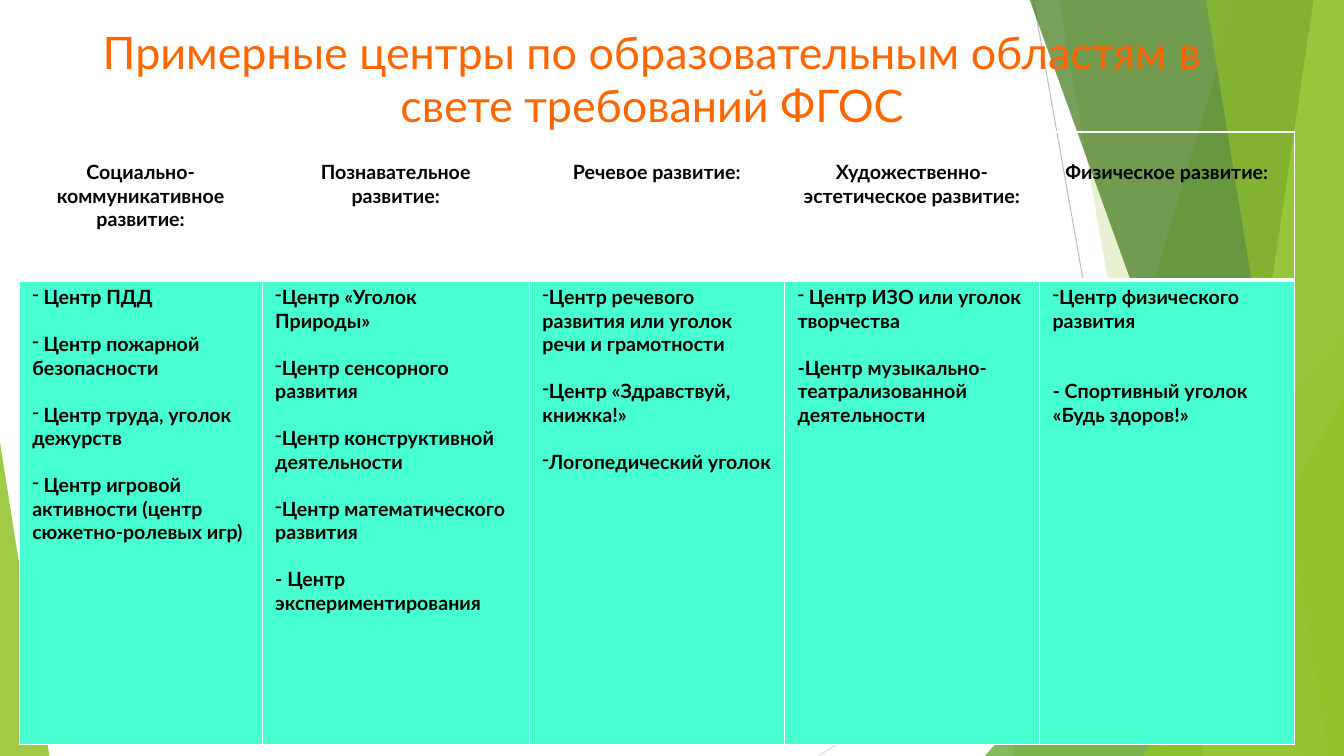
from dataclasses import dataclass

from lxml.etree import SubElement
from pptx import Presentation
from pptx.dml.color import RGBColor
from pptx.enum.shapes import MSO_CONNECTOR, MSO_SHAPE
from pptx.enum.text import MSO_ANCHOR, PP_ALIGN
from pptx.oxml.ns import qn
from pptx.shapes.autoshape import Shape
from pptx.slide import Slide
from pptx.table import _Cell
from pptx.text.text import _Paragraph
from pptx.util import Emu, Pt

PX = 9144  # 100 px to the inch
SLIDE_W, SLIDE_H = 1333, 750


@dataclass(frozen=True)
class Theme:
    font: str = "Lato"
    title: str = "FF6600"
    text: str = "000000"
    cell: str = "47FFD1"
    border: str = "FFFFFF"
    lime: str = "90C226"
    pale_lime: str = "C0E474"
    green: str = "54A021"
    dark_green: str = "3F7819"
    title_size: int = 32
    text_size: int = 14
    text_line: float = 16.8
    thin: int = 1
    thick: int = 3


THEME = Theme()


@dataclass(frozen=True)
class Ray:
    start: tuple[int, int]
    end: tuple[int, int]
    color: str


@dataclass(frozen=True)
class Wedge:
    """Facet reaching the right edge; its left side runs from top_x to bottom_x."""
    top_x: int
    bottom_x: int
    color: str
    opacity: int


@dataclass(frozen=True)
class Corner:
    left: int
    top: int
    width: int
    apex: int
    color: str
    opacity: int


@dataclass(frozen=True)
class Center:
    name: str
    bulleted: bool = True
    lines_before: int = 1


@dataclass(frozen=True)
class Area:
    heading: str
    width: int
    centers: tuple[Center, ...]


RAYS = (Ray((1025, 0), (1158, 750), "BFBFBF"), Ray((1333, 403), (812, 750), "D9D9D9"))
FACETS: tuple[Wedge | Corner, ...] = (
    Wedge(1228, 1004, THEME.lime, 30),
    Wedge(1050, 1182, THEME.lime, 20),
    Corner(977, 333, 356, 1, THEME.green, 72),
    Wedge(1021, 1291, THEME.dark_green, 70),
    Wedge(1303, 1192, THEME.pale_lime, 70),
    Wedge(1196, 1318, THEME.lime, 65),
    Corner(1134, 393, 199, 1, THEME.lime, 80),
    Corner(0, 439, 49, 0, THEME.lime, 85),
)
TITLE = "Примерные центры по образовательным областям в свете требований ФГОС"
AREAS = (
    Area("Социально-коммуникативное развитие:", 241, (
        Center(" Центр ПДД"),
        Center(" Центр пожарной безопасности"),
        Center(" Центр труда, уголок дежурств"),
        Center(" Центр игровой активности (центр сюжетно-ролевых игр)"))),
    Area("Познавательное развитие:", 265, (
        Center("Центр «Уголок Природы»"),
        Center("Центр сенсорного развития"),
        Center("Центр конструктивной деятельности"),
        Center("Центр математического развития"),
        Center("- Центр экспериментирования", bulleted=False))),
    Area("Речевое развитие:", 253, (
        Center("Центр речевого развития или уголок речи и грамотности"),
        Center("Центр «Здравствуй, книжка!»"),
        Center("Логопедический уголок"))),
    Area("Художественно-эстетическое развитие:", 253, (
        Center(" Центр ИЗО или уголок творчества"),
        Center("-Центр музыкально-театрализованной деятельности", bulleted=False))),
    Area("Физическое развитие:", 253, (
        Center("Центр физического развития"),
        Center("- Спортивный уголок «Будь здоров!»", bulleted=False, lines_before=2))),
)


def px(*lengths: int) -> list[Emu]:
    return [Emu(length * PX) for length in lengths]


def paint(facet: Shape, color: str, opacity: int) -> None:
    facet.shadow.inherit = False
    facet.line.fill.background()
    facet.fill.solid()
    facet.fill.fore_color.rgb = RGBColor.from_string(color)
    tint = facet.fill._xPr.find(qn("a:solidFill"))[0]
    SubElement(tint, qn("a:alpha"), val=str(opacity * 1000))


def draw_ray(slide: Slide, ray: Ray) -> None:
    line = slide.shapes.add_connector(MSO_CONNECTOR.STRAIGHT, *px(*ray.start, *ray.end))
    line.line.color.rgb = RGBColor.from_string(ray.color)
    line.line.width = Pt(0.75)
    SubElement(line._element.spPr, qn("a:effectLst"))


def draw_facet(slide: Slide, facet: Wedge | Corner) -> None:
    if isinstance(facet, Wedge):
        outline = slide.shapes.build_freeform(facet.top_x, -1, scale=PX)
        outline.add_line_segments(
            [(SLIDE_W, -1), (SLIDE_W, SLIDE_H), (facet.bottom_x, SLIDE_H)], close=True)
        shape = outline.convert_to_shape()
    else:
        shape = slide.shapes.add_shape(
            MSO_SHAPE.ISOSCELES_TRIANGLE,
            *px(facet.left, facet.top, facet.width, SLIDE_H - facet.top))
        shape.adjustments[0] = facet.apex
    paint(shape, facet.color, facet.opacity)


def style(paragraph: _Paragraph, size: int, color: str, bold: bool = False) -> None:
    font = paragraph.font
    font.name, font.size, font.bold = THEME.font, Pt(size), bold
    font.color.rgb = RGBColor.from_string(color)


def draw_title(slide: Slide) -> None:
    frame = slide.shapes.add_textbox(*px(47, 15, 1200, 125)).text_frame
    frame.word_wrap = True
    frame.vertical_anchor = MSO_ANCHOR.MIDDLE
    title = frame.paragraphs[0]
    title.text = TITLE
    title.alignment = PP_ALIGN.CENTER
    style(title, THEME.title_size, THEME.title)


def frame_cell(cell: _Cell, top: int, bottom: int, margin_top: int) -> None:
    cell.margin_left, cell.margin_right, cell.margin_top, cell.margin_bottom = px(
        13, 13, margin_top, 5)
    properties = cell._tc.get_or_add_tcPr()
    sides = {"lnL": THEME.thin, "lnR": THEME.thin, "lnT": top, "lnB": bottom}
    for side, width in sides.items():
        border = SubElement(properties, qn(f"a:{side}"), w=str(Pt(width)))
        SubElement(SubElement(border, qn("a:solidFill")), qn("a:srgbClr"), val=THEME.border)


def fill_heading(cell: _Cell, area: Area) -> None:
    frame_cell(cell, THEME.thin, THEME.thick, margin_top=28)
    cell.fill.background()
    heading = cell.text_frame.paragraphs[0]
    heading.text = area.heading
    heading.alignment = PP_ALIGN.CENTER
    style(heading, THEME.text_size, THEME.text, bold=True)


def fill_centers(cell: _Cell, area: Area) -> None:
    frame_cell(cell, THEME.thick, THEME.thin, margin_top=5)
    cell.fill.solid()
    cell.fill.fore_color.rgb = RGBColor.from_string(THEME.cell)
    for index, center in enumerate(area.centers):
        frame = cell.text_frame
        item = frame.add_paragraph() if index else frame.paragraphs[0]
        item.text = center.name
        if index:
            item.space_before = Pt(THEME.text_line * center.lines_before)
        if center.bulleted:
            SubElement(item._p.get_or_add_pPr(), qn("a:buChar"), char="-")
        style(item, THEME.text_size, THEME.text, bold=True)


def draw_areas(slide: Slide) -> None:
    width = sum(area.width for area in AREAS)
    table = slide.shapes.add_table(2, len(AREAS), *px(19, 131, width, 608)).table
    table.first_row = table.horz_banding = False
    table.rows[0].height, table.rows[1].height = px(147, 461)
    for column, area in enumerate(AREAS):
        table.columns[column].width = Emu(area.width * PX)
        fill_heading(table.cell(0, column), area)
        fill_centers(table.cell(1, column), area)


def main() -> None:
    deck = Presentation()
    deck.slide_width, deck.slide_height = px(SLIDE_W, SLIDE_H)
    slide = deck.slides.add_slide(deck.slide_layouts[6])
    # Background facets
    for ray in RAYS:
        draw_ray(slide, ray)
    for facet in FACETS:
        draw_facet(slide, facet)
    # Title and table of centers
    draw_title(slide)
    draw_areas(slide)
    deck.save("out.pptx")


if __name__ == "__main__":
    main()
